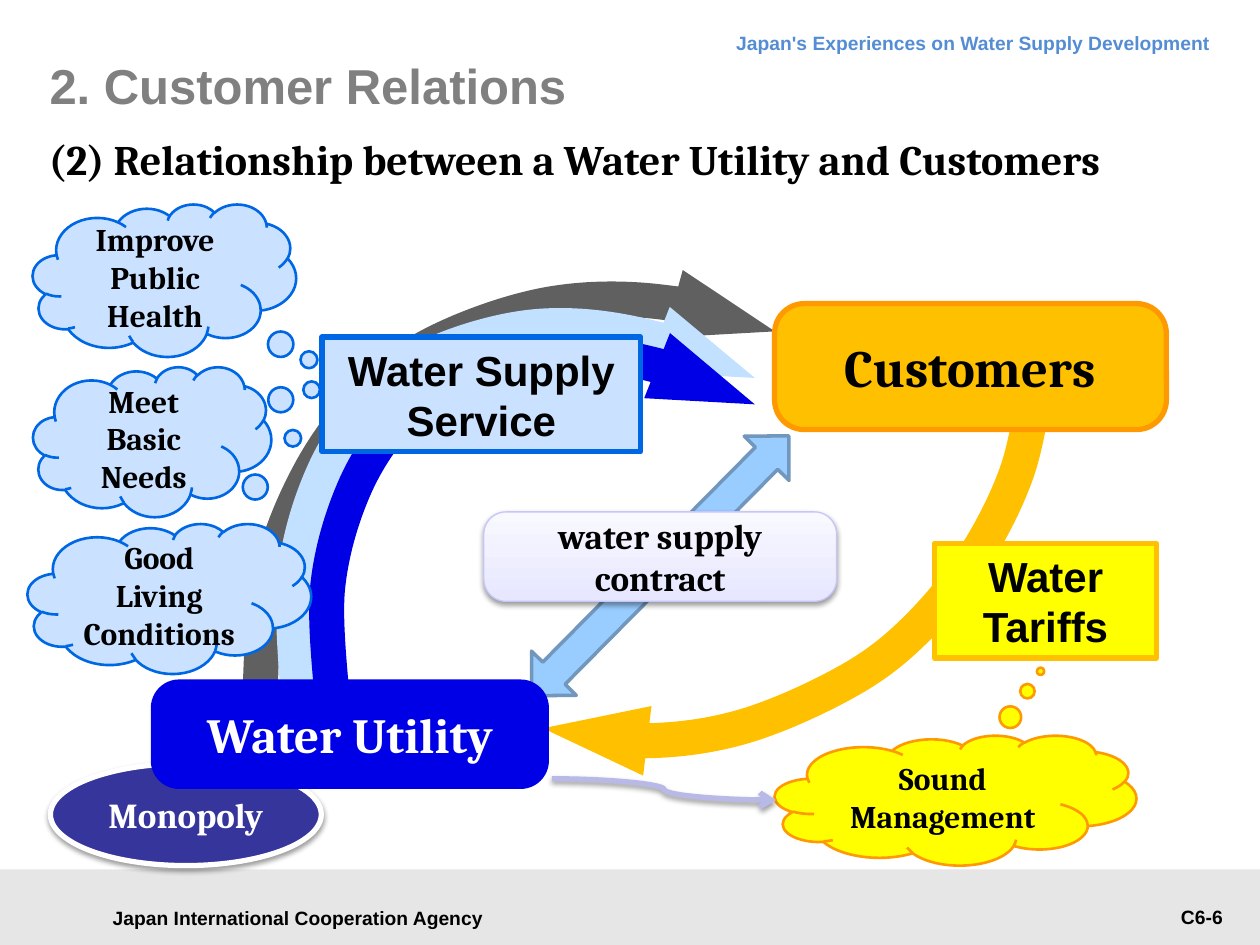
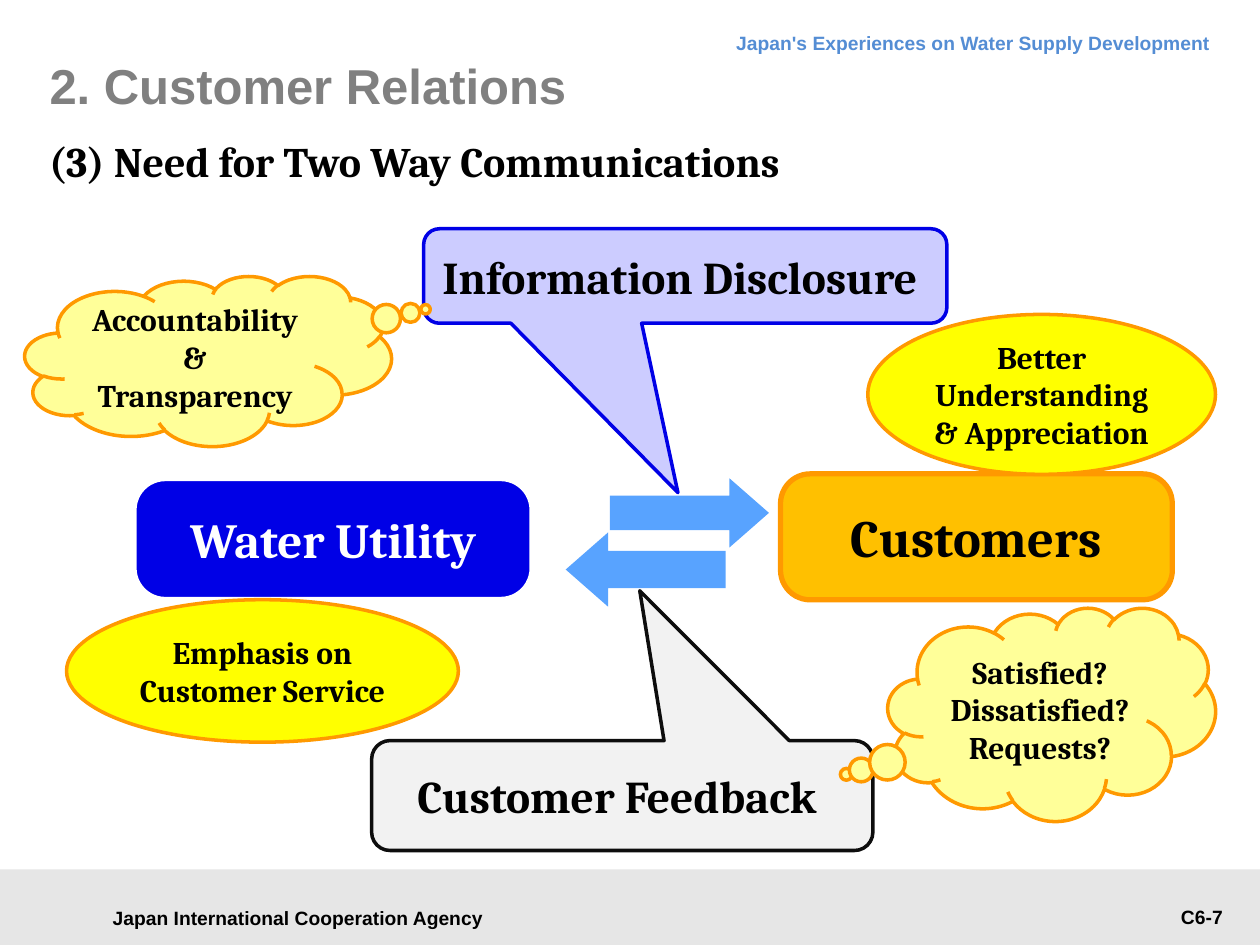
import pptx
import pptx.util
import pptx.dml.color
import pptx.enum.shapes
import pptx.enum.text
import pptx.oxml.ns
from lxml import etree

Pt = pptx.util.Pt
RGBColor = pptx.dml.color.RGBColor
Kind = pptx.enum.shapes.MSO_SHAPE
Align = pptx.enum.text.PP_ALIGN
Anchor = pptx.enum.text.MSO_ANCHOR
qn = pptx.oxml.ns.qn

BLACK = RGBColor(0x00, 0x00, 0x00)
WHITE = RGBColor(0xFF, 0xFF, 0xFF)
GREY = RGBColor(0x80, 0x80, 0x80)
DARK = RGBColor(0x60, 0x60, 0x60)
BAND = RGBColor(0xE6, 0xE6, 0xE6)
HEAD = RGBColor(0x54, 0x8D, 0xD4)
BLUE = RGBColor(0x00, 0x00, 0xE6)
EDGE = RGBColor(0x00, 0x67, 0xE4)
PALE = RGBColor(0xCA, 0xE2, 0xFF)
ICE = RGBColor(0xC2, 0xE0, 0xFF)
SKY = RGBColor(0x99, 0xCC, 0xFF)
STEEL = RGBColor(0x71, 0x97, 0xBD)
AZURE = RGBColor(0x58, 0xA3, 0xFF)
NAVY = RGBColor(0x35, 0x35, 0x9B)
LILAC = RGBColor(0xCC, 0xCC, 0xFF)
RIM = RGBColor(0xC6, 0xC6, 0xFB)
MIST_LOW = RGBColor(0xE7, 0xE7, 0xFF)
MIST_TOP = RGBColor(0xF8, 0xF8, 0xFF)
MAUVE = RGBColor(0xB9, 0xB9, 0xE7)
GOLD = RGBColor(0xFF, 0xC0, 0x00)
AMBER = RGBColor(0xFF, 0x99, 0x00)
YELLOW = RGBColor(0xFF, 0xFF, 0x00)
CREAM = RGBColor(0xFF, 0xFF, 0x99)
SMOKE = RGBColor(0xF2, 0xF2, 0xF2)
INK = RGBColor(0x0D, 0x0D, 0x0D)


def write(shape, text, size=18, color=BLACK, font="Cambria",
          align=Align.CENTER, anchor=Anchor.MIDDLE, inset=None, pitch=None):
    frame = shape.text_frame
    frame.text = text
    frame.word_wrap = True
    frame.auto_size = pptx.enum.text.MSO_AUTO_SIZE.NONE
    frame.vertical_anchor = anchor
    if inset is not None:
        frame.margin_left = Pt(inset)
        frame.margin_top = frame.margin_right = frame.margin_bottom = 0
    for para in frame.paragraphs:
        para.alignment = align
        para.space_before = Pt(0)
        if pitch:
            para.line_spacing = Pt(pitch)
        for run in para.runs:
            run.font.name = font
            run.font.size = Pt(size)
            run.font.bold = True
            run.font.color.rgb = color


def draw(slide, kind, box, fill, line=None, width=1.5, adj=(), text="", **form):
    shape = slide.shapes.add_shape(kind, *map(Pt, box))
    shape.shadow.inherit = False
    shape.fill.solid()
    shape.fill.fore_color.rgb = fill
    if line is None:
        shape.line.fill.background()
    else:
        shape.line.color.rgb = line
        shape.line.width = Pt(width)
    for i, value in enumerate(adj):
        shape.adjustments[i] = value
    if text:
        write(shape, text, **form)
    return shape


deck = pptx.Presentation()
deck.slide_width, deck.slide_height = Pt(720), Pt(540)
layout = deck.slide_layouts[1]
bond, talk = [deck.slides.add_slide(layout) for _ in range(2)]

# Band, agency and header are drawn once and moved to the layout
shared = [draw(bond, Kind.RECTANGLE, (0, 496.8, 720, 43.2), BAND)]
for text, box, form in [
    ("Japan International Cooperation Agency", (51.1, 512.2, 238.3, 24.5), {}),
    ("Japan's Experiences on Water Supply Development", (195.4, 9.4, 503.3, 27.4),
     dict(color=HEAD, align=Align.RIGHT, anchor=Anchor.TOP, pitch=18)),
]:
    label = bond.shapes.add_textbox(*map(Pt, box))
    write(label, text, size=11, font="Arial", **form)
    shared.append(label)
for i, shape in enumerate(shared):
    shape._element.nvSpPr.cNvPr.set("id", str(50 + i))
    layout.shapes._spTree.append(shape._element)

# Title, heading and page number
for slide, head, page, spot, pitch in [
    (bond, "(2) Relationship between a Water Utility and Customers", "C6-6",
     (24.5, 73.2), 32),
    (talk, "(3) Need for Two Way Communications", "C6-7", (25.4, 77.4), None),
]:
    title, body = slide.shapes.title, slide.placeholders[1]
    for shape, box in [(title, (28.3, 19.8, 646.6, 56.9)), (body, (*spot, 646.6, 42))]:
        shape.left, shape.top, shape.width, shape.height = map(Pt, box)
    write(title, "2. Customer Relations", size=28, color=GREY, font="Arial",
          align=Align.LEFT, inset=0)
    write(body, head, size=24, align=Align.LEFT, anchor=Anchor.TOP,
          inset=28 - spot[0], pitch=pitch)
    props = body.text_frame.paragraphs[0]._p.get_or_add_pPr()
    props.set("marL", "0")
    props.set("indent", "0")
    etree.SubElement(props, qn("a:buNone"))
    label = slide.shapes.add_textbox(*map(Pt, (592.9, 514, 113, 20.9)))
    write(label, page, size=11, font="Arial", align=Align.RIGHT, anchor=Anchor.TOP)

# Slide 1: relationship
both = draw(bond, Kind.UP_DOWN_ARROW, (359.3, 218.9, 36, 208.8), SKY, STEEL, 2)
both.rotation = 44.7
monopoly = draw(bond, Kind.OVAL, (28.8, 436.3, 154.8, 58.3), NAVY, WHITE, 3,
                text="Monopoly", size=20, color=WHITE)

# Thick arrows are smooth Bezier curves through their knots
flows = [
    (GOLD, [(593.3, 211.7), (581, 270), (553.7, 323.3), (517, 365.8),
            (477.4, 393.1), (421.2, 416.2), (364.3, 423.4), (310.3, 416.2)]),
    (DARK, [(148.3, 400.3), (154.1, 329.8), (177.8, 268.6), (213.8, 221),
            (254.9, 193), (316.1, 173.5), (379.4, 172.8), (442.8, 189.4)]),
    (ICE, [(170.6, 401.8), (168.5, 329.8), (185, 270), (215.3, 225.4),
           (251.3, 200.9), (308.2, 186.5), (368.6, 192.2), (431.3, 216)]),
    (BLUE, [(190.1, 403.2), (187.2, 336.2), (202.3, 279.4), (229.7, 237.6),
            (263.5, 215.3), (316.1, 202.3), (372.2, 208.1), (431.3, 231.1)]),
]
FINE = 100
tails = []
for color, knots in flows:
    ends = [knots[0], *knots, knots[-1]]
    track = []
    for a, b, c, d in zip(ends, ends[1:], ends[2:], ends[3:]):
        track += [[q + (r - p) / 6 for p, q, r in zip(a, b, c)],
                  [r - (s - q) / 6 for q, r, s in zip(b, c, d)], c]
    pen = bond.shapes.build_freeform(*[v * FINE for v in knots[0]], scale=Pt(1) / FINE)
    pen.add_line_segments([(x * FINE, y * FINE) for x, y in track], close=False)
    flow = pen.convert_to_shape()
    route = next(flow._element.iter(qn("a:path")))
    legs = route.findall(qn("a:lnTo"))
    for i in range(0, len(legs), 3):
        curve = etree.SubElement(route, qn("a:cubicBezTo"))
        for leg in legs[i:i + 3]:
            curve.append(leg[0])
            route.remove(leg)
    flow.shadow.inherit = False
    flow.fill.background()
    flow.line.color.rgb = color
    flow.line.width = Pt(20)
    tails.append((flow, "triangle", "sm"))

draw(bond, Kind.ROUNDED_RECTANGLE, (442.6, 173.5, 223.9, 72), GOLD, AMBER, 3,
     [0.236], "Customers", size=30)
deal = draw(bond, Kind.ROUNDED_RECTANGLE, (276.5, 292.5, 201.6, 51.1), MIST_TOP, RIM,
            0.75, [0.248], "water supply contract", size=20)
deal.fill.gradient()
deal.fill.gradient_angle = 90
for stop, color, place in zip(deal.fill.gradient_stops, (MIST_LOW, MIST_TOP), (0, 1)):
    stop.color.rgb = color
    stop.position = place

for text, box, adj, fill, line in [
    ("Improve Public Health", (18.7, 116.6, 150.5, 87.1), (0.628, 0.597), PALE, EDGE),
    ("Good Living Conditions", (15.8, 299.2, 162, 85.7), (0.55, -1.35), PALE, EDGE),
    ("Sound Management", (442.8, 420.2, 206.6, 74.2), (0.235, -0.993), YELLOW, AMBER),
    ("Meet Basic Needs", (18.9, 209.6, 136.1, 85.7), (0.766, -0.397), PALE, EDGE),
]:
    draw(bond, Kind.CLOUD_CALLOUT, box, fill, line, adj=adj, text=text)

for text, box, fill, line in [
    ("Water Tariffs", (534, 310.6, 126.9, 65.5), YELLOW, GOLD),
    ("Water Supply Service", (184, 192.6, 182.2, 65.5), PALE, EDGE),
]:
    draw(bond, Kind.RECTANGLE, box, fill, line, 3, text=text, size=24, font="Arial")
draw(bond, Kind.ROUNDED_RECTANGLE, (86.2, 388.3, 227.5, 62.6), BLUE, adj=[0.259],
     text="Water Utility", size=28, color=WHITE)

link = bond.shapes.add_connector(pptx.enum.shapes.MSO_CONNECTOR.CURVE,
                                 Pt(315.4), Pt(445), Pt(443.5), Pt(457.2))
link.line.color.rgb = MAUVE
link.line.width = Pt(3)
tails.append((link, "arrow", "med"))

for item, tip, wide in tails:
    etree.SubElement(item.line._get_or_add_ln(), qn("a:tailEnd"), type=tip, w=wide)

for item in (monopoly, deal, link):
    props = item._element.spPr
    effect = props.find(qn("a:effectLst"))
    if effect is None:
        effect = etree.SubElement(props, qn("a:effectLst"))
    shade = etree.SubElement(effect, qn("a:outerShdw"), blurRad=str(Pt(3.1)),
                             dist=str(Pt(1.6)), dir="5400000", rotWithShape="0")
    tint = etree.SubElement(shade, qn("a:srgbClr"), val="000000")
    etree.SubElement(tint, qn("a:alpha"), val="38000")

# Slide 2: two way communications
arrow = (0.5, 0.571)
draw(talk, Kind.LEFT_ARROW, (323.3, 304.2, 91.4, 42.5), AZURE, adj=arrow)
draw(talk, Kind.ROUNDED_RECTANGULAR_CALLOUT, (242.1, 130.7, 299, 54), LILAC, BLUE, 2,
     (-0.014, 2.293, 0.167), "Information Disclosure ", size=26)
draw(talk, Kind.RIGHT_ARROW, (348.5, 273.3, 90.9, 39.6), AZURE, adj=arrow)
draw(talk, Kind.ROUNDED_RECTANGULAR_CALLOUT, (212.4, 423.2, 286.4, 62.8), SMOKE, INK, 2,
     (0.035, -1.864, 0.167), "Customer Feedback ", size=26)
draw(talk, Kind.ROUNDED_RECTANGLE, (446, 270.8, 223.9, 72), GOLD, AMBER, 3,
     [0.236], "Customers", size=30)
draw(talk, Kind.ROUNDED_RECTANGLE, (76.6, 273.5, 227.5, 69.1), BLUE, WHITE, 3,
     [0.259], "Water Utility", size=28, color=WHITE)

for kind, text, box, adj, fill in [
    (Kind.CLOUD_CALLOUT, "Accountability & Transparency",
     (14.2, 157.7, 209.5, 97.2), (0.593, -0.304), CREAM),
    (Kind.CLOUD_CALLOUT, "Satisfied?\nDissatisfied? Requests?",
     (507.4, 347.2, 187.2, 121.9), (-0.627, 0.282), CREAM),
    (Kind.OVAL, "Better Understanding & Appreciation",
     (495.9, 179.7, 198.7, 91.4), (), YELLOW),
    (Kind.OVAL, "Emphasis on Customer Service",
     (38, 342.7, 223.9, 81.4), (), YELLOW),
]:
    draw(talk, kind, box, fill, AMBER, 2, adj, text)

deck.save("out.pptx")
